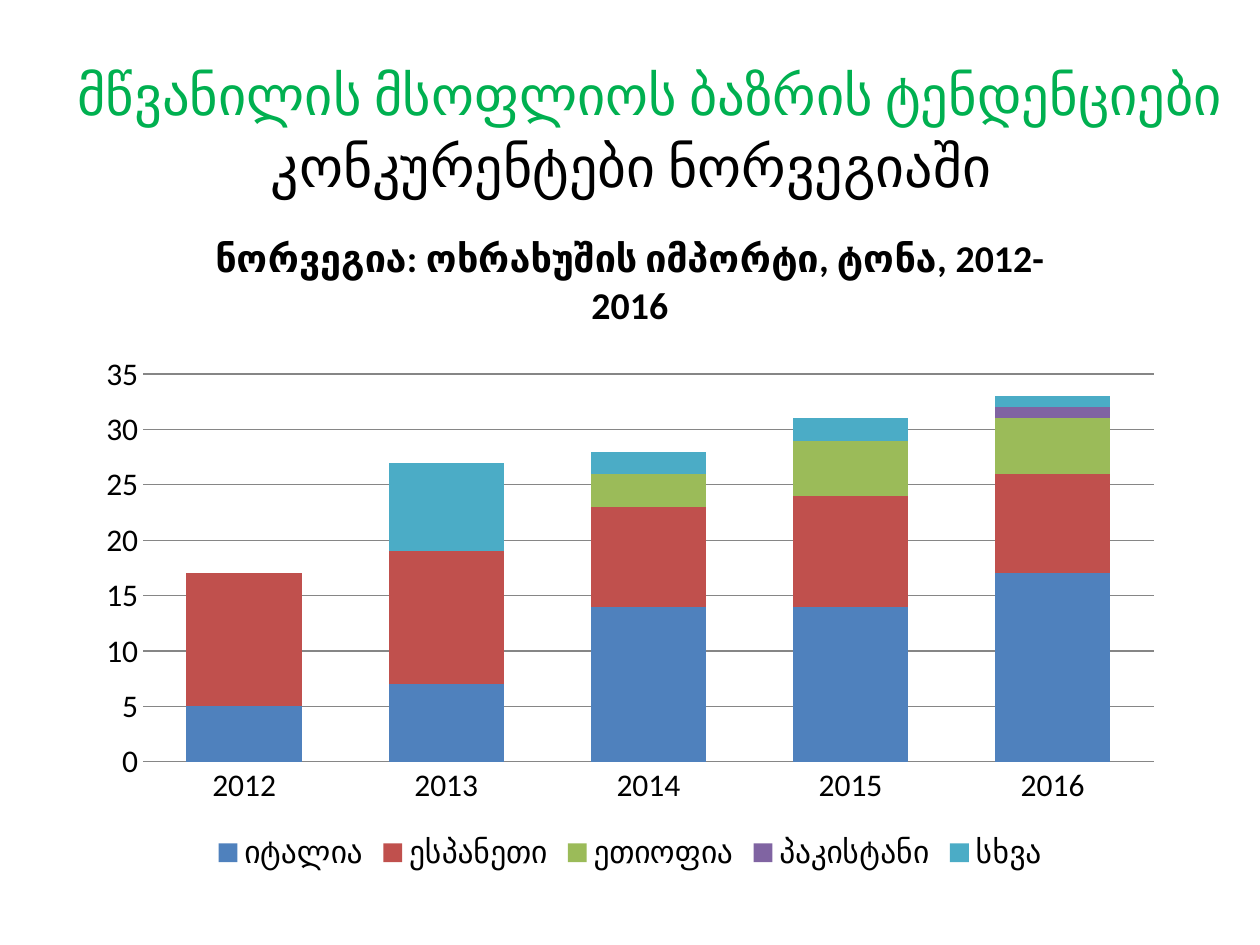
from pptx import Presentation
from pptx.chart.data import CategoryChartData as ChartData
from pptx.dml.color import RGBColor as Rgb
from pptx.enum.chart import XL_CHART_TYPE as Kind
from pptx.enum.chart import XL_LEGEND_POSITION as Place
from pptx.enum.chart import XL_TICK_MARK as Tick
from pptx.enum.text import MSO_ANCHOR as Anchor
from pptx.enum.text import MSO_AUTO_SIZE as Fit
from pptx.enum.text import PP_ALIGN as Align
from pptx.oxml.ns import qn
from pptx.util import Inches, Pt

FONT = "Calibri"
COLORS = {
    "green": "00B050",
    "text": "000000",
    "grid": "868686",
    "italy": "4F81BD",
    "spain": "C0504D",
    "ethiopia": "9BBB59",
    "pakistan": "8064A2",
    "other": "4BACC6",
}
YEARS = ["2012", "2013", "2014", "2015", "2016"]
IMPORTS = [
    ("იტალია", "italy", (5, 7, 14, 14, 17)),
    ("ესპანეთი", "spain", (12, 12, 9, 10, 9)),
    ("ეთიოფია", "ethiopia", (0, 0, 3, 5, 5)),
    ("პაკისტანი", "pakistan", (0, 0, 0, 0, 1)),
    ("სხვა", "other", (0, 8, 2, 2, 1)),
]


def color(name):
    return Rgb.from_string(COLORS[name])


def style(font, size, tone="text", bold=False):
    font.name = FONT
    font.size = Pt(size)
    font.bold = bold
    font.color.rgb = color(tone)


def set_line(holder, box, text, size, tone, anchor):
    """Place a placeholder and fill it with one centred line."""
    holder.left, holder.top, holder.width, holder.height = map(Inches, box)
    frame = holder.text_frame
    frame.text = text
    frame.word_wrap = True
    frame.auto_size = Fit.NONE
    frame.vertical_anchor = anchor
    frame.margin_left = frame.margin_right = Inches(0.05)
    para = frame.paragraphs[0]
    para.alignment = Align.CENTER
    style(para.runs[0].font, size, tone)
    return para


def add_title(slide, box):
    set_line(slide.shapes.title, box, "მწვანილის მსოფლიოს ბაზრის ტენდენციები",
             31.2, "green", Anchor.MIDDLE)


def add_body(slide, box):
    para = set_line(slide.placeholders[1], box, "კონკურენტები ნორვეგიაში",
                    32, "text", Anchor.TOP)
    # No bullet and no hanging indent
    props = para._p.get_or_add_pPr()
    props.set("marL", "0")
    props.set("indent", "0")
    props.append(props.makeelement(qn("a:buNone"), {}))


def add_chart(slide, box):
    data = ChartData()
    data.categories = YEARS
    for name, _, vals in IMPORTS:
        data.add_series(name, vals)
    chart = slide.shapes.add_chart(
        Kind.COLUMN_STACKED, *map(Inches, box), data).chart
    style(chart.font, 18)

    # Heading and legend
    chart.has_title = True
    head = chart.chart_title
    head.include_in_layout = False
    head.text_frame.text = "ნორვეგია: ოხრახუშის იმპორტი, ტონა, 2012-2016"
    style(head.text_frame.paragraphs[0].runs[0].font, 21.6, bold=True)
    chart.has_legend = True
    chart.legend.position = Place.BOTTOM
    chart.legend.include_in_layout = False

    # Columns
    plot = chart.plots[0]
    plot.gap_width = 75
    plot.overlap = 100
    plot.vary_by_categories = False
    for series, (_, tone, _) in zip(plot.series, IMPORTS):
        series.format.fill.solid()
        series.format.fill.fore_color.rgb = color(tone)

    # Axes
    years, tons = chart.category_axis, chart.value_axis
    for axis in (years, tons):
        axis.major_tick_mark = axis.minor_tick_mark = Tick.NONE
    tons.minimum_scale = 0
    tons.maximum_scale = 35
    tons.major_unit = 5
    tons.has_major_gridlines = True
    tons.format.line.fill.background()
    for line in (years.format.line, tons.major_gridlines.format.line):
        line.color.rgb = color("grid")
        line.width = Pt(0.75)


def main():
    deck = Presentation()
    deck.slide_width, deck.slide_height = Inches(10), Inches(7.5)
    slide = deck.slides.add_slide(deck.slide_layouts[1])
    add_body(slide, (0.51, 0.99, 9, 0.71))
    add_chart(slide, (0.67, 1.62, 8.66, 5.35))
    add_title(slide, (0.51, 0.12, 9.3, 1.25))
    deck.save("out.pptx")


if __name__ == "__main__":
    main()
